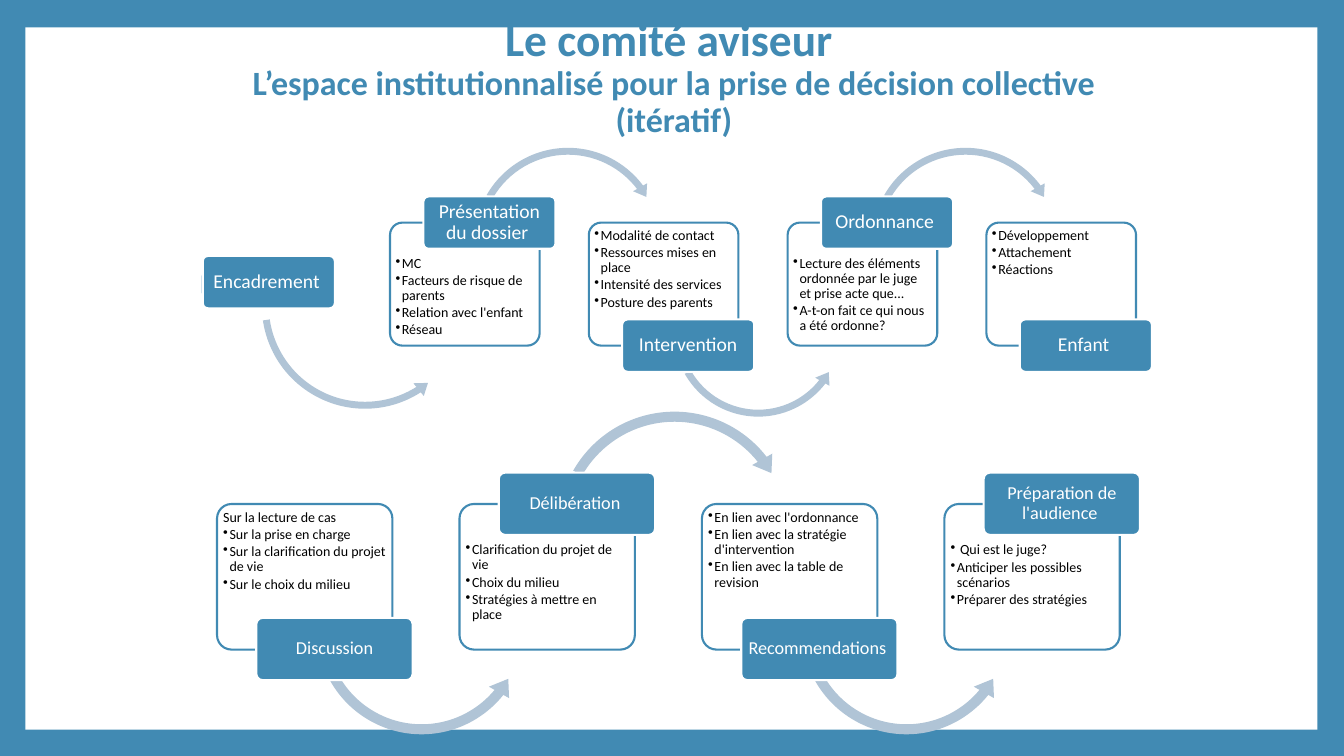
from pptx import Presentation
from pptx.dml.color import RGBColor
from pptx.enum.shapes import MSO_SHAPE
from pptx.enum.text import MSO_ANCHOR, PP_ALIGN
from pptx.util import Cm, Pt
from lxml.etree import SubElement
from pptx.oxml.ns import qn

BLUE = RGBColor(0x41, 0x8A, 0xB3)
PALE_BLUE = RGBColor(0xB0, 0xC4, 0xD6)
WHITE = RGBColor(0xFF, 0xFF, 0xFF)
BLACK = RGBColor(0, 0, 0)

ENTRY = [
    ("Encadrement ", "bottom", []),
]
MEETING = [
    ("Présentation du dossier ", "top",
     ["MC", "Facteurs de risque de parents", "Relation avec l'enfant", "Réseau"]),
    ("Intervention", "bottom",
     ["Modalité de contact", "Ressources mises en place", "Intensité des services",
      "Posture des parents"]),
    ("Ordonnance ", "top",
     ["Lecture des éléments ordonnée par le juge et prise acte que...",
      "A-t-on fait ce qui nous a été ordonne?"]),
    ("Enfant ", "bottom", ["Développement", "Attachement", "Réactions"]),
]
DECISION = [
    ("Discussion", "bottom",
     ["Sur la lecture de cas", "Sur la prise en charge",
      "Sur la clarification du projet de vie", "Sur le choix du milieu"]),
    ("Délibération ", "top",
     ["Clarification du projet de vie", "Choix du milieu", "Stratégies à mettre en place"]),
    ("Recommendations ", "bottom",
     ["En lien avec l'ordonnance", "En lien avec la stratégie d'intervention",
      "En lien avec la table de revision"]),
    ("Préparation de l'audience ", "top",
     [" Qui est le juge?", "Anticiper les possibles scénarios", "Préparer des stratégies"]),
]
UNBULLETED = "Sur la lecture de cas"

ARROW_KINDS = {"top": MSO_SHAPE.CIRCULAR_ARROW, "bottom": MSO_SHAPE.LEFT_CIRCULAR_ARROW}

ROWS = [
    dict(steps=ENTRY, left=5.11, top=6.91, pitch=0, card=(3.18, 0.51),
         label=(3.33, 1.32), shift=0, label_tops={"bottom": 6.45}, size=14, drop=0,
         arrows={"bottom": (1.37, 4.98, 5.44, (0.032, 3.973, 34.496, 103.012, 0.038))},
         linked=1),
    dict(steps=MEETING, left=9.83, top=5.61, pitch=5.01, card=(3.77, 3.1),
         label=(3.33, 1.32), shift=0.84, label_tops={"top": 4.95, "bottom": 8.05},
         size=14, drop=0.7,
         arrows={"top": (2.01, 3.61, 4.95, (0.035, 4.388, 193.857, 125.755, 0.041)),
                 "bottom": (2.02, 6.12, 4.5, (0.039, 4.902, 22.657, 90.245, 0.046))},
         linked=3),
    dict(steps=DECISION, left=5.47, top=12.7, pitch=6.11, card=(4.42, 3.67),
         label=(3.94, 1.57), shift=0.99, label_tops={"top": 11.91, "bottom": 15.58},
         size=13, drop=0.82,
         arrows={"top": (2.32, 10.21, 6.2, (0.041, 5.112, 193.133, 125.755, 0.047)),
                 "bottom": (2.35, 13.06, 5.61, (0.045, 5.682, 23.437, 90.245, 0.052))},
         linked=3),
]
ROWS[2]["label_tops"]["bottom"] = 15.57

presentation = Presentation()
presentation.slide_width = Cm(33.87)
presentation.slide_height = Cm(19.05)
slide = presentation.slides.add_slide(presentation.slide_layouts[6])
slide.background.fill.solid()
slide.background.fill.fore_color.rgb = BLUE


def add_block(kind, left, top, width, height, fill, line=None):
    block = slide.shapes.add_shape(kind, Cm(left), Cm(top), Cm(width), Cm(height))
    block.shadow.inherit = False
    block.fill.solid()
    block.fill.fore_color.rgb = fill
    if line is None:
        block.line.fill.background()
    else:
        block.line.color.rgb = line
        block.line.width = Pt(1.5)
    return block


def add_run(paragraph, text, size, color, bold=False):
    run = paragraph.add_run()
    run.text = text
    run.font.name = "Calibri"
    run.font.size = Pt(size)
    run.font.bold = bold
    run.font.color.rgb = color


add_block(MSO_SHAPE.RECTANGLE, 0.64, 0.69, 32.56, 17.7, WHITE)

title = slide.shapes.add_textbox(Cm(5.82), Cm(0.79), Cm(22.33), Cm(2.39)).text_frame
title.word_wrap = True
title.vertical_anchor = MSO_ANCHOR.MIDDLE
heading = title.paragraphs[0]
heading.alignment = PP_ALIGN.CENTER
heading.line_spacing = 0.9
add_run(heading, "Le comité aviseur ", 32.4, BLUE, True)
heading.add_line_break()
add_run(heading, "L’espace institutionnalisé pour la prise de décision collective (itératif)",
        24.3, BLUE, True)

for row in ROWS:
    for index, (name, edge, points) in enumerate(row["steps"]):
        left = row["left"] + index * row["pitch"]

        card = add_block(MSO_SHAPE.ROUNDED_RECTANGLE, left, row["top"], *row["card"], WHITE, BLUE)
        card.adjustments[0] = 0.1
        details = card.text_frame
        details.word_wrap = True
        details.vertical_anchor = MSO_ANCHOR.TOP
        details.margin_left = details.margin_right = details.margin_bottom = Cm(0.05)
        details.margin_top = Cm(0.05 + (row["drop"] if edge == "top" else 0))
        for number, point in enumerate(points):
            item = details.add_paragraph() if number else details.paragraphs[0]
            item.alignment = PP_ALIGN.LEFT
            item.line_spacing = 0.9
            item.space_after = Pt(1.5)
            properties = item._p.get_or_add_pPr()
            properties.set("marL", str(Cm(0.16)))
            properties.set("indent", str(Cm(-0.16)))
            if point != UNBULLETED:
                SubElement(properties, qn("a:buChar")).set("char", "•")
            add_run(item, point, 10, BLACK)

        if index < row["linked"]:
            offset, arrow_top, diameter, bends = row["arrows"][edge]
            arrow = add_block(ARROW_KINDS[edge], left + offset, arrow_top, diameter, diameter,
                              PALE_BLUE)
            for position, bend in enumerate(bends):
                arrow.adjustments[position] = bend

        label = add_block(MSO_SHAPE.ROUNDED_RECTANGLE, left + row["shift"],
                          row["label_tops"][edge], *row["label"], BLUE, WHITE)
        label.adjustments[0] = 0.1
        caption = label.text_frame
        caption.word_wrap = True
        caption.vertical_anchor = MSO_ANCHOR.MIDDLE
        caption.margin_left = caption.margin_right = Cm(0.07)
        caption.margin_top = caption.margin_bottom = Cm(0.05)
        caption.paragraphs[0].alignment = PP_ALIGN.CENTER
        caption.paragraphs[0].line_spacing = 0.9
        add_run(caption.paragraphs[0], name, row["size"], WHITE)

presentation.save("out.pptx")
